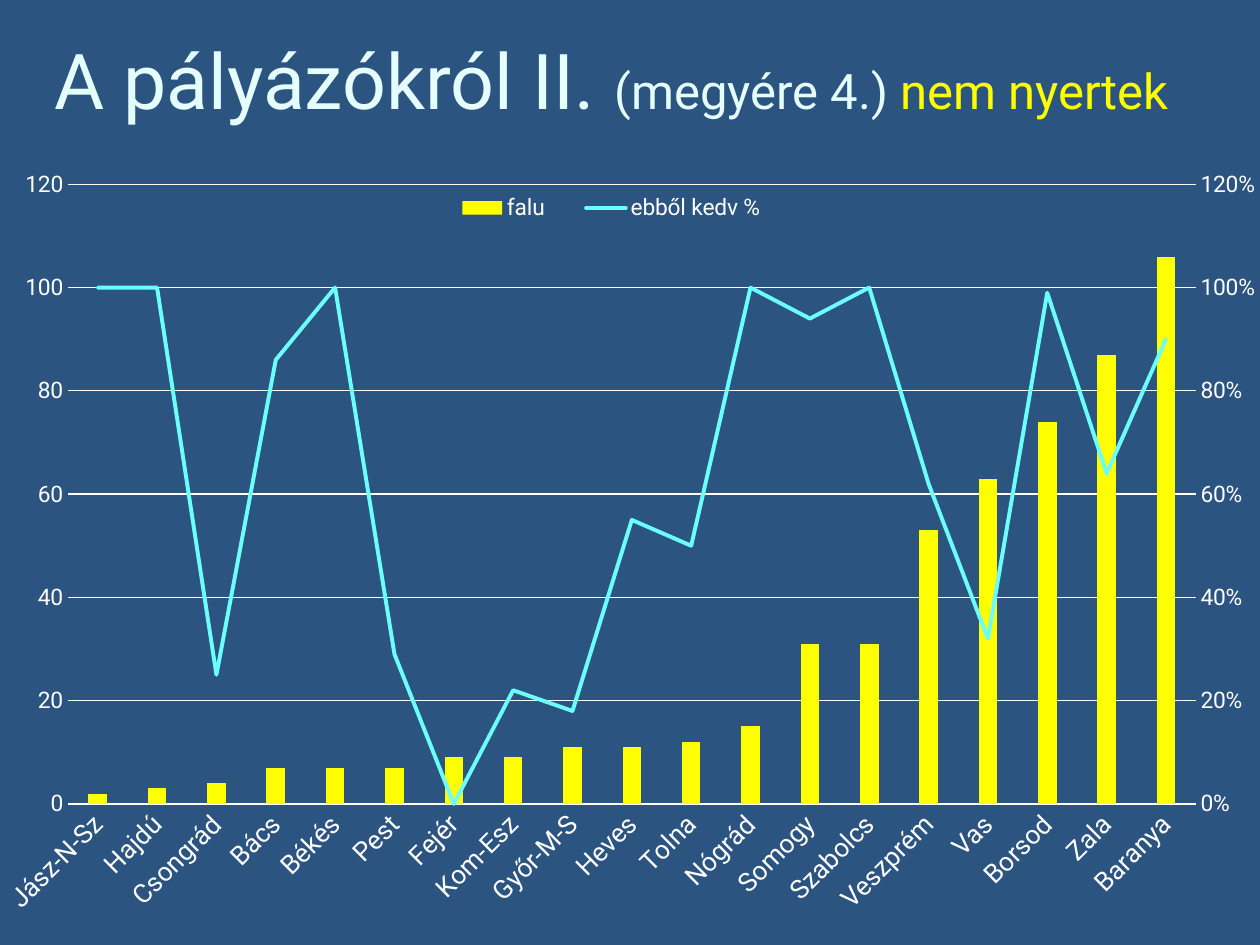
from copy import deepcopy

from lxml.etree import SubElement
from pptx import Presentation
from pptx.chart.data import CategoryChartData
from pptx.dml.color import RGBColor
from pptx.enum.chart import XL_CHART_TYPE, XL_LEGEND_POSITION, XL_TICK_MARK
from pptx.enum.text import MSO_ANCHOR, MSO_AUTO_SIZE, PP_ALIGN
from pptx.oxml import parse_xml
from pptx.oxml.ns import nsdecls, qn
from pptx.util import Emu, Pt

THEME = {
    "font": "Roboto",
    "bg": "2B5481", "title": "E5FFFF", "accent": "FFFF00",
    "line": "6CFFFF", "text": "FFFFFF",
    "title_pt": 44, "sub_pt": 28, "chart_pt": 10, "cat_pt": 15, "label_pt": 13,
    "grid_pt": 0.75, "line_pt": 2.25,
}
TITLE = [
    ("A pályázókról II. ", "title_pt", "title"),
    ("(megyére 4.) ", "sub_pt", "title"),
    ("nem nyertek", "sub_pt", "accent"),
]
COUNTIES = [  # county, villages, share of them favoured
    ("Jász-N-Sz", 2, 1), ("Hajdú", 3, 1), ("Csongrád", 4, 0.25),
    ("Bács", 7, 0.86), ("Békés", 7, 1), ("Pest", 7, 0.29),
    ("Fejér", 9, 0), ("Kom-Esz", 9, 0.22), ("Győr-M-S", 11, 0.18),
    ("Heves", 11, 0.55), ("Tolna", 12, 0.5), ("Nógrád", 15, 1),
    ("Somogy", 31, 0.94), ("Szabolcs", 31, 1), ("Veszprém", 53, 0.62),
    ("Vas", 63, 0.32), ("Borsod", 74, 0.99), ("Zala", 87, 0.64),
    ("Baranya", 106, 0.9),
]
SERIES = ("falu", "ebből kedv %")
SLIDE = (1260, 945)
TITLE_BOX = (25, 37, 1173, 83)
CHART_BOX = (0, 135, 1260, 810)
PLOT = (0.054, 0.061, 0.895, 0.765)
LEGEND = (0.34, 0.07, 0.29, 0.04)


def px(n):
    return Emu(round(n * 914400 / 126))


def color(name):
    return RGBColor.from_string(THEME[name])


def style_font(font, size, name="text"):
    values = {"name": THEME["font"], "size": Pt(THEME[size]), "bold": False}
    for key, value in values.items():
        setattr(font, key, value)
    font.color.rgb = color(name)


def style_line(line, name, width):
    line.color.rgb = color(name)
    line.width = Pt(THEME[width])


def layout_xml(box, inner=False):
    target = '<c:layoutTarget val="inner"/>' if inner else ""
    modes = "".join(f'<c:{k}Mode val="edge"/>' for k in "xy")
    sizes = "".join(f'<c:{k} val="{v}"/>' for k, v in zip("xywh", box))
    return parse_xml(f'<c:layout {nsdecls("c")}><c:manualLayout>{target}'
                     f'{modes}{sizes}</c:manualLayout></c:layout>')


def set_vals(el, **vals):
    for tag, val in vals.items():
        el.find(".//" + qn("c:" + tag)).set("val", val)


def add_title(s):
    title = s.shapes.title
    title.left, title.top, title.width, title.height = map(px, TITLE_BOX)
    tf = title.text_frame
    values = {"word_wrap": True, "auto_size": MSO_AUTO_SIZE.NONE,
              "vertical_anchor": MSO_ANCHOR.MIDDLE,
              "margin_left": 0, "margin_right": 0}
    for key, value in values.items():
        setattr(tf, key, value)
    p = tf.paragraphs[0]
    p.alignment = PP_ALIGN.CENTER
    for text, size, name in TITLE:
        r = p.add_run()
        r.text = text
        style_font(r.font, size, name)


def style_axes(chart):
    cat, val = chart.category_axis, chart.value_axis
    for axis, size in ((cat, "cat_pt"), (val, "label_pt")):
        axis.major_tick_mark = axis.minor_tick_mark = XL_TICK_MARK.NONE
        style_font(axis.tick_labels.font, size)
    style_line(cat.format.line, "text", "grid_pt")
    cat._element.find(qn("c:txPr")).find(qn("a:bodyPr")).set("rot", "-2700000")
    val.minimum_scale, val.maximum_scale, val.major_unit = 0, 120, 20
    val.tick_labels.number_format = "0"
    val.tick_labels.number_format_is_linked = False
    val.has_major_gridlines = True
    style_line(val.major_gridlines.format.line, "text", "grid_pt")
    val.format.line.fill.background()


def move_to_right_axis(chart):
    """Turn the second column series into a line on its own percent axis."""
    cat, val = chart.category_axis._element, chart.value_axis._element
    bar = chart.plots[0]._element
    ser = bar.findall(qn("c:ser"))[1]
    invert = ser.find(qn("c:invertIfNegative"))
    if invert is not None:
        ser.remove(invert)
    line = parse_xml(f'<c:lineChart {nsdecls("c")}><c:grouping val="standard"/>'
                     '<c:varyColors val="0"/></c:lineChart>')
    line.append(ser)
    ser.find(qn("c:tx")).addnext(
        parse_xml(f'<c:marker {nsdecls("c")}><c:symbol val="none"/></c:marker>'))
    SubElement(line, qn("c:marker")).set("val", "1")
    for axis_id in ("5001", "5002"):
        SubElement(line, qn("c:axId")).set("val", axis_id)
    bar.addnext(line)

    right, hidden = deepcopy(val), deepcopy(cat)
    right.remove(right.find(qn("c:majorGridlines")))
    right.find(qn("c:numFmt")).set("formatCode", "0%")
    set_vals(right, axId="5002", crossAx="5001", axPos="r", crosses="max",
             max="1.2", majorUnit="0.2")
    set_vals(hidden, axId="5001", crossAx="5002", delete="1")
    val.addnext(right)
    right.addnext(hidden)


def add_chart(s):
    data = CategoryChartData()
    names, *columns = zip(*COUNTIES)
    data.categories = names
    for name, values in zip(SERIES, columns):
        data.add_series(name, values)
    chart = s.shapes.add_chart(XL_CHART_TYPE.COLUMN_CLUSTERED,
                               *map(px, CHART_BOX), data).chart
    style_font(chart.font, "chart_pt")
    chart.has_title = False
    style_axes(chart)
    move_to_right_axis(chart)

    bars, lines = chart.plots
    bars.gap_width, bars.overlap, bars.vary_by_categories = 219, -27, False
    fill = bars.series[0].format.fill
    fill.solid()
    fill.fore_color.rgb = color("accent")
    share = lines.series[0]
    share.smooth = False
    style_line(share.format.line, "line", "line_pt")
    share.format.line._ln.set("cap", "rnd")

    chart.has_legend = True
    legend = chart.legend
    legend.position = XL_LEGEND_POSITION.BOTTOM
    legend.include_in_layout = False
    style_font(legend.font, "label_pt")
    for parent, box, index in ((legend._element, LEGEND, 1),
                               (bars._element.getparent(), PLOT, 0)):
        old = parent.find(qn("c:layout"))
        if old is not None:
            parent.remove(old)
        parent.insert(index, layout_xml(box, inner=box is PLOT))


def main():
    prs = Presentation()
    prs.slide_width, prs.slide_height = map(px, SLIDE)
    s = prs.slides.add_slide(prs.slide_layouts[5])
    s.background.fill.solid()
    s.background.fill.fore_color.rgb = color("bg")
    add_title(s)
    add_chart(s)
    prs.save("out.pptx")


if __name__ == "__main__":
    main()
